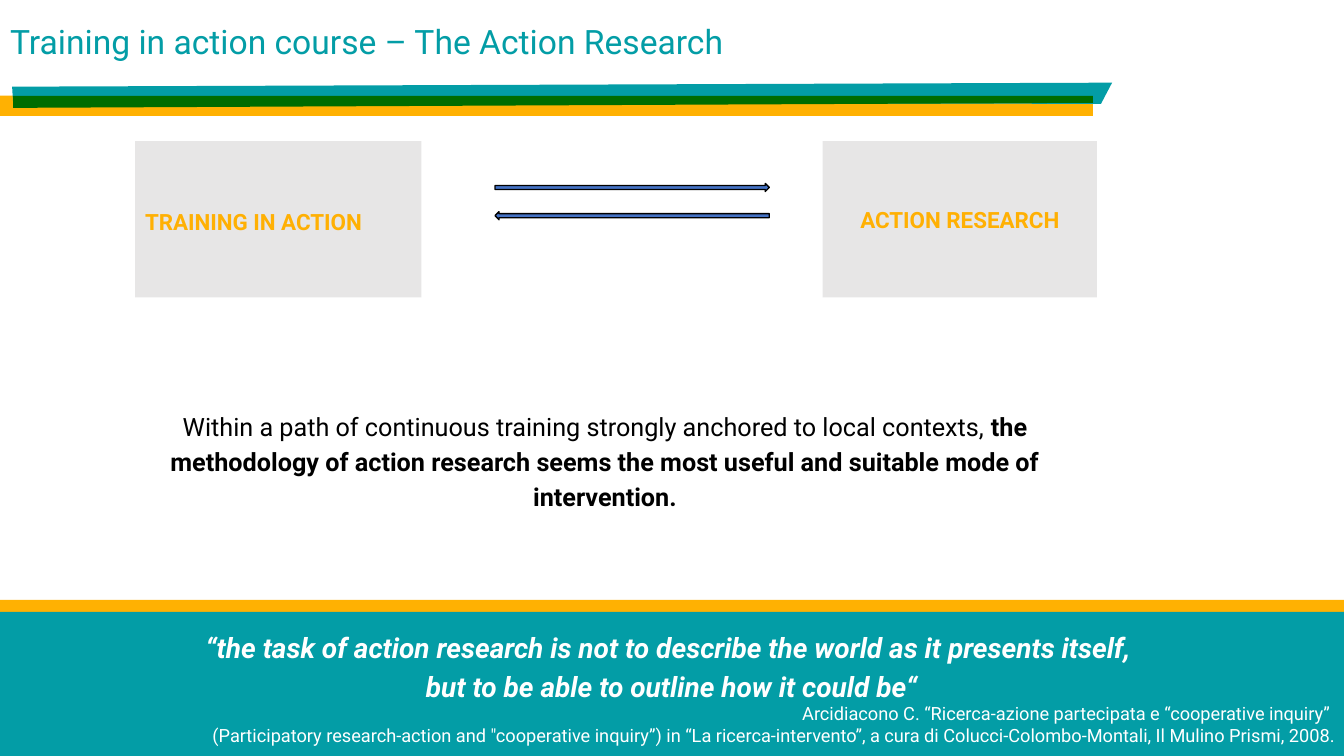
import pptx
import pptx.util
import pptx.dml.color
import pptx.enum.shapes
import pptx.enum.text

Inches = pptx.util.Inches
Pt = pptx.util.Pt
SHAPES = pptx.enum.shapes.MSO_SHAPE
ALIGN = pptx.enum.text.PP_ALIGN
ANCHOR = pptx.enum.text.MSO_ANCHOR

FONT = "Roboto"
WIDTH, HEIGHT = 13.33, 7.5
COLORS = {
    "teal": "039DA6",
    "amber": "FFB102",
    "label": "FFB003",
    "green": "006C00",
    "gray": "E7E6E6",
    "blue": "4472C4",
    "black": "000000",
    "white": "FFFFFF",
}


def rgb(name):
    return pptx.dml.color.RGBColor.from_string(COLORS[name])


def paint(shape, fill, line=None):
    shape.shadow.inherit = False
    shape.fill.solid()
    shape.fill.fore_color.rgb = rgb(fill)
    if line:
        shape.line.color.rgb = rgb(line)
        shape.line.width = Pt(1)
    else:
        shape.line.fill.background()


def add_preset(slide, kind, box, fill, line=None):
    shape = slide.shapes.add_shape(kind, *map(Inches, box))
    paint(shape, fill, line)
    return shape


def add_outline(slide, points, fill):
    corners = [(Inches(x), Inches(y)) for x, y in points]
    builder = slide.shapes.build_freeform(*corners[0])
    builder.add_line_segments(corners[1:], close=True)
    paint(builder.convert_to_shape(), fill)


def add_run(paragraph, text, size, color, bold=False, italic=False):
    run = paragraph.add_run()
    run.text = text
    run.font.name = FONT
    run.font.size = Pt(size)
    run.font.bold = bold
    run.font.italic = italic
    run.font.color.rgb = rgb(color)


def add_title(slide, box):
    title = slide.shapes.title
    title.left, title.top, title.width, title.height = map(Inches, box)
    frame = title.text_frame
    frame.auto_size = pptx.enum.text.MSO_AUTO_SIZE.NONE
    frame.vertical_anchor = ANCHOR.TOP
    paragraph = frame.paragraphs[0]
    paragraph.alignment = ALIGN.LEFT
    add_run(paragraph, "Training in action course – The Action Research", 24, "teal")


def add_header_bars(slide, box):
    left, top, width, height = box
    right = left + width
    add_preset(slide, SHAPES.RECTANGLE, box, "amber")
    # Slanted teal bar, then the darker overlap
    add_outline(slide, [(left + 0.12, top - 0.09), (right + 0.19, top - 0.13),
                        (right + 0.08, top + 0.08), (left + 0.13, top + 0.07)], "teal")
    add_outline(slide, [(left + 0.13, top), (right, top),
                        (right, top + 0.07), (left + 0.13, top + 0.12)], "green")


def add_concept(slide, box, text, alignment):
    shape = add_preset(slide, SHAPES.RECTANGLE, box, "gray")
    shape.text_frame.vertical_anchor = ANCHOR.MIDDLE
    paragraph = shape.text_frame.paragraphs[0]
    paragraph.alignment = alignment
    add_run(paragraph, text, 16, "label", bold=True)
    return paragraph


def add_concepts(slide, box):
    left, top, width, height = box
    training = add_concept(slide, (left, top, 2.84, height),
                           "TRAINING IN ACTION", ALIGN.JUSTIFY)
    training.line_spacing = 1.15
    training.space_after = Pt(8)
    add_concept(slide, (left + width - 2.72, top, 2.72, height),
                "ACTION RESEARCH", ALIGN.CENTER)
    # Arrows running both ways between the two concepts
    for index, kind in enumerate((SHAPES.RIGHT_ARROW, SHAPES.LEFT_ARROW)):
        arrow_box = (left + 3.57, top + 0.42 + 0.28 * index, 2.72, 0.08)
        add_preset(slide, kind, arrow_box, "blue", "black")


def add_statement(slide, box):
    frame = slide.shapes.add_textbox(*map(Inches, box)).text_frame
    frame.word_wrap = True
    paragraph = frame.paragraphs[0]
    paragraph.alignment = ALIGN.CENTER
    paragraph.line_spacing = 1.15
    add_run(paragraph, "Within a path of continuous training strongly anchored "
            "to local contexts, ", 18, "black")
    add_run(paragraph, "the methodology of action research seems the most useful "
            "and suitable mode of intervention.", 18, "black", bold=True)


def add_quote_banner(slide, box):
    left, top, width, height = box
    add_preset(slide, SHAPES.RECTANGLE, (left, top - 0.12, width, 0.12), "amber")
    banner = add_preset(slide, SHAPES.RECTANGLE, box, "teal")
    frame = banner.text_frame
    frame.vertical_anchor = ANCHOR.MIDDLE
    quote = [
        "“the task of action research is not to describe the world as it presents itself, ",
        "but to be able to outline how it could be“",
    ]
    citation = [
        "Arcidiacono C. “Ricerca-azione partecipata e “cooperative inquiry” ",
        "(Participatory research-action and \"cooperative inquiry”) in “La "
        "ricerca-intervento”, a cura di Colucci-Colombo-Montali, Il Mulino Prismi, 2008.",
    ]
    for index, text in enumerate(quote + citation):
        paragraph = frame.add_paragraph() if index else frame.paragraphs[0]
        quoted = index < len(quote)
        paragraph.alignment = ALIGN.CENTER if quoted else ALIGN.RIGHT
        paragraph.line_spacing = 1.15 if quoted else 1.0
        add_run(paragraph, text, 20 if quoted else 13, "white", quoted, quoted)


def main():
    presentation = pptx.Presentation()
    presentation.slide_width = Inches(WIDTH)
    presentation.slide_height = Inches(HEIGHT)
    slide = presentation.slides.add_slide(presentation.slide_layouts[5])
    add_header_bars(slide, (0, 0.95, 10.84, 0.2))
    add_title(slide, (0, 0.16, 11.27, 0.5))
    add_concepts(slide, (1.34, 1.4, 9.54, 1.55))
    add_statement(slide, (0.96, 3.99, 10.08, 1.2))
    add_quote_banner(slide, (0, 6.07, WIDTH, 1.47))
    presentation.save("out.pptx")


if __name__ == "__main__":
    main()
